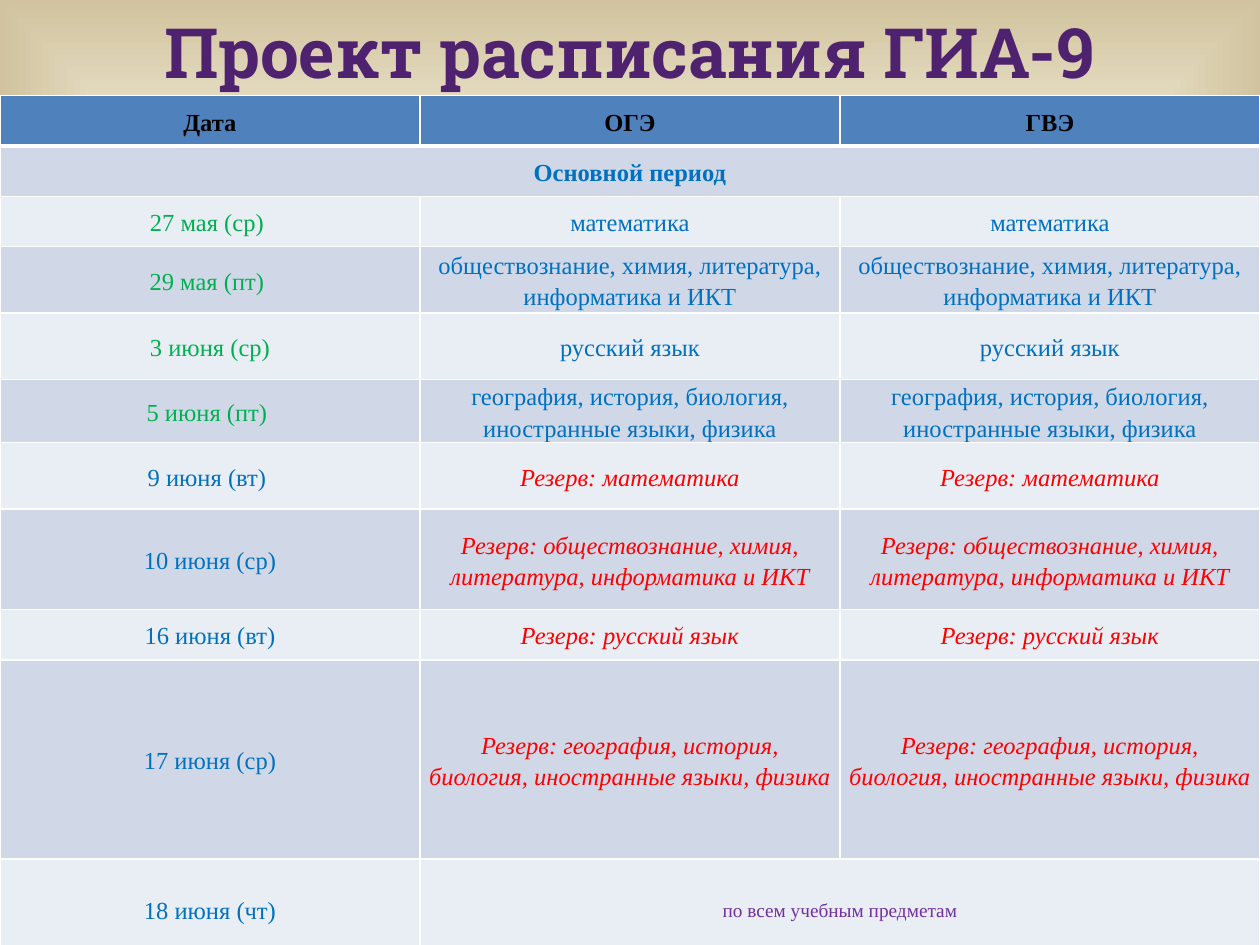
from lxml import etree
from pptx import Presentation
from pptx.dml.color import RGBColor
from pptx.enum import text as t
from pptx.oxml import ns, parse_xml
from pptx.util import Pt

BLUE, GREEN, RED = "0070C0", "00B050", "FF0000"


def write(frame, words, font="Times New Roman", size=14, color=BLUE,
          bold=False, italic=False, space=1.15):
    par = frame.paragraphs[0]
    par.alignment = t.PP_ALIGN.CENTER
    par.line_spacing = space
    run = par.add_run()
    run.text = words
    run.font.name, run.font.size = font, Pt(size)
    run.font.bold, run.font.italic = bold, italic
    run.font.color.rgb = RGBColor.from_string(color)


def edge(cell, side, width):
    line = etree.SubElement(cell._tc.get_or_add_tcPr(), ns.qn("a:ln" + side),
                            w=str(Pt(width)))
    fill = etree.SubElement(line, ns.qn("a:solidFill"))
    etree.SubElement(fill, ns.qn("a:srgbClr"), val="FFFFFF")


prs = Presentation()
prs.slide_width, prs.slide_height = Pt(720), Pt(540)
slide = prs.slides.add_slide(prs.slide_layouts[5])

# Background: gradient from the centre to the edges
slide.background.fill.solid()
back = slide.element.find(".//" + ns.qn("p:bgPr"))
stops = "".join(f'<a:gs pos="{pos}000"><a:srgbClr val="{color}"/></a:gs>'
                for pos, color in [(0, "FFEFD1"), (65, "F0EBD5"), (100, "D1C39F")])
back.replace(back[0], parse_xml(
    f'<a:gradFill {ns.nsdecls("a")}><a:gsLst>{stops}</a:gsLst><a:path path="shape">'
    '<a:fillToRect l="50000" t="50000" r="50000" b="50000"/></a:path></a:gradFill>'))

# Title
title = slide.shapes.title
title.left, title.top, title.width, title.height = Pt(36), Pt(9.5), Pt(648), Pt(39.6)
frame = title.text_frame
frame.auto_size = t.MSO_AUTO_SIZE.NONE
frame.vertical_anchor = t.MSO_ANCHOR.MIDDLE
write(frame, "Проект расписания ГИА-9", font="Roboto Slab", size=39.6,
      color="4F2270", bold=True, space=1.0)

# Timetable: row height, date, date colour, subjects (the same for both exams)
main = {"color": BLUE}
spare = {"color": RED, "italic": True}
days = [
    (28.8, "27 мая (ср) ", GREEN, "математика", main),
    (38, "29 мая (пт) ", GREEN,
     "обществознание, химия, литература, информатика и ИКТ", main),
    (38, "3 июня (ср)", GREEN, "русский язык", main),
    (36, "5 июня (пт) ", GREEN,
     "география, история, биология, иностранные языки, физика", main),
    (38, "9 июня (вт) ", BLUE, "Резерв: математика", spare),
    (57.3, "10 июня (ср)", BLUE,
     "Резерв: обществознание, химия, литература, информатика и ИКТ", spare),
    (28.8, "16 июня (вт)", BLUE, "Резерв: русский язык", spare),
    (113.8, "17 июня (ср)", BLUE,
     "Резерв: география, история, биология, иностранные языки, физика", spare),
    (57.3, "18 июня (чт)", BLUE, "по всем учебным предметам",
     {"size": 11, "color": "7030A0"}),
]
highs = [28.8, 28.8] + [day[0] for day in days]
last = len(highs) - 1
grid = slide.shapes.add_table(len(highs), 3, 0, Pt(54.6), Pt(720), Pt(sum(highs))).table

# Cell format: banded fills, white borders, thicker under the header
for i, high in enumerate(highs):
    grid.rows[i].height = Pt(high)
    shade = "4F81BD" if i == 0 else ("E9EDF4", "D0D8E8")[i % 2]
    for cell in grid.rows[i].cells:
        for side in "LRTB":
            thick = (i == 0 and side == "B") or (i == 1 and side == "T")
            edge(cell, side, 3 if thick else 1)
        cell.fill.solid()
        cell.fill.fore_color.rgb = RGBColor.from_string(shade)
        cell.vertical_anchor = t.MSO_ANCHOR.MIDDLE
        cell.margin_left = cell.margin_right = Pt(5)
        cell.margin_top = cell.margin_bottom = 0
grid.cell(1, 0).merge(grid.cell(1, 2))
grid.cell(last, 1).merge(grid.cell(last, 2))

# Cell text
for j, head in enumerate(["Дата", "ОГЭ", "ГВЭ"]):
    write(grid.cell(0, j).text_frame, head, color="000000", bold=True)
write(grid.cell(1, 0).text_frame, "Основной период", bold=True)
for i, (high, date, color, topic, style) in enumerate(days, 2):
    write(grid.cell(i, 0).text_frame, date, color=color)
    for j in (1, 2):
        if not grid.cell(i, j).is_spanned:
            write(grid.cell(i, j).text_frame, topic, **style)

prs.save("out.pptx")
